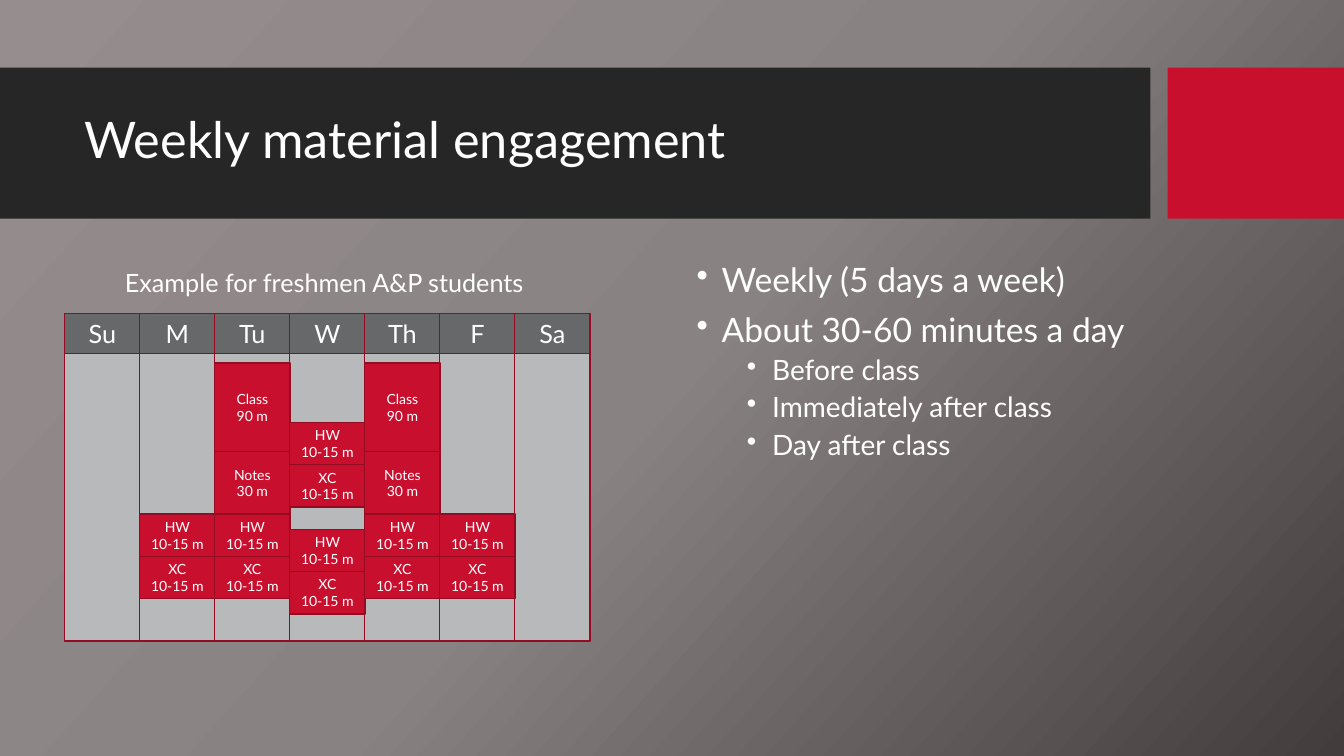
from copy import deepcopy
from dataclasses import dataclass

from lxml import etree
from pptx import Presentation
from pptx import util as u
from pptx.dml import color
from pptx.enum import shapes, text
from pptx.oxml import ns
from pptx.shapes.autoshape import Shape
from pptx.slide import Slide

FONT = "Lato"
COLORS = {
    "white": "FFFFFF",
    "banner": "262626",
    "red": "C8102E",
    "border": "940C22",
    "column": "B8B9BB",
    "header": "66686A",
}
BACKDROP = [(0, "968E8E"), (0.5, "898282"), (1, "433C3C")]
DAYS = ["Su", "M", "Tu", "W", "Th", "F", "Sa"]
CALENDAR_LEFT, DAY_STEP, DAY_WIDTH = 0.64, 0.744, 0.75


@dataclass(frozen=True)
class Task:
    name: str
    duration: str
    height: float


@dataclass(frozen=True)
class Session:
    day: str
    top: float
    tasks: tuple[Task, ...]


@dataclass(frozen=True)
class Bullet:
    label: str
    level: int = 0


LECTURE = (Task("Class", "90 m", 0.88), Task("Notes", "30 m", 0.62))
PRACTICE = (Task("HW", "10-15 m", 0.42), Task("XC", "10-15 m", 0.42))
SESSIONS = [
    Session("M", 5.1, PRACTICE),
    Session("Tu", 3.6, LECTURE + PRACTICE),
    Session("W", 4.19, PRACTICE),
    Session("W", 5.25, PRACTICE),
    Session("Th", 3.6, LECTURE + PRACTICE),
    Session("F", 5.1, PRACTICE),
]
BULLETS = [
    Bullet("Weekly (5 days a week)"),
    Bullet("About 30-60 minutes a day"),
    Bullet("Before class", 1),
    Bullet("Immediately after class", 1),
    Bullet("Day after class", 1),
]


def rgb(value: str) -> color.RGBColor:
    return color.RGBColor.from_string(value)


def write(box: Shape, content: str, *, size: float, align=text.PP_ALIGN.LEFT,
          spacing: float = 1, before: float = 0, level: int = 0,
          bullet: bool = False) -> None:
    frame = box.text_frame
    for line in content.split("\n"):
        first = not frame.text
        para = frame.paragraphs[0] if first else frame.add_paragraph()
        para.alignment = align
        para.level = level
        para.line_spacing = spacing
        para.space_before = u.Pt(0 if first else before)
        if bullet:
            properties = para._p.get_or_add_pPr()
            properties.set("marL", str(u.Inches(0.25 + 0.5 * level)))
            properties.set("indent", str(u.Inches(-0.25)))
            etree.SubElement(properties, ns.qn("a:buChar"), char="•")
        span = para.add_run()
        span.text = line
        span.font.name = FONT
        span.font.size = u.Pt(size)
        span.font.color.rgb = rgb(COLORS["white"])


def add_text_box(page: Slide, left: float, top: float, width: float, height: float,
                 *, wrap: bool = True, anchor=text.MSO_ANCHOR.TOP) -> Shape:
    box = page.shapes.add_textbox(*map(u.Inches, (left, top, width, height)))
    box.text_frame.word_wrap = wrap
    box.text_frame.vertical_anchor = anchor
    return box


def add_block(page: Slide, left: float, top: float, width: float, height: float,
              fill: str, border: str | None = None) -> Shape:
    box = page.shapes.add_shape(
        shapes.MSO_SHAPE.RECTANGLE, *map(u.Inches, (left, top, width, height)))
    box.shadow.inherit = False
    box.fill.solid()
    box.fill.fore_color.rgb = rgb(COLORS[fill])
    if border:
        box.line.color.rgb = rgb(COLORS[border])
        box.line.width = u.Pt(1)
    else:
        box.line.fill.background()
    frame = box.text_frame
    frame.margin_left = frame.margin_right = u.Inches(0.05)
    frame.vertical_anchor = text.MSO_ANCHOR.MIDDLE
    return box


def add_day_block(page: Slide, day: str, top: float, height: float, fill: str) -> Shape:
    left = CALENDAR_LEFT + DAY_STEP * DAYS.index(day)
    return add_block(page, left, top, DAY_WIDTH, height, fill, "border")


def paint_backdrop(page: Slide) -> None:
    fill = page.background.fill
    fill.gradient()
    fill.gradient_angle = 318
    stop_list = page.element.find(".//" + ns.qn("a:gsLst"))
    stop_list.append(deepcopy(stop_list[-1]))
    for stop, (position, value) in zip(fill.gradient_stops, BACKDROP):
        stop.position = position
        stop.color.rgb = rgb(value)


def add_calendar(page: Slide) -> None:
    center = text.PP_ALIGN.CENTER
    for day in DAYS:
        add_day_block(page, day, 3.5, 2.86, "column")
    for day in DAYS:
        write(add_day_block(page, day, 3.11, 0.4, "header"), day, size=18, align=center)
    for session in SESSIONS:
        top = session.top
        for task in session.tasks:
            box = add_day_block(page, session.day, top, task.height, "red")
            write(box, f"{task.name}\n{task.duration}", size=10, align=center)
            top += task.height


def main() -> None:
    deck = Presentation()
    deck.slide_width, deck.slide_height = u.Inches(13.33), u.Inches(7.5)
    page = deck.slides.add_slide(deck.slide_layouts[6])
    paint_backdrop(page)
    add_block(page, 0, 0.67, 11.41, 1.5, "banner")
    add_block(page, 11.58, 0.67, 1.75, 1.5, "red")

    title = add_text_box(page, 0.74, 0.82, 10.51, 1.18, anchor=text.MSO_ANCHOR.MIDDLE)
    write(title, "Weekly material engagement", size=36, spacing=0.9)

    body = add_text_box(page, 6.81, 2.56, 4.45, 3.94)
    for item in BULLETS:
        write(body, item.label, size=24 - 4 * item.level, spacing=0.9,
              before=10 - 5 * item.level, level=item.level, bullet=True)

    add_calendar(page)
    caption = add_text_box(page, 1.14, 2.6, 4.25, 0.4, wrap=False)
    caption.text_frame.auto_size = text.MSO_AUTO_SIZE.SHAPE_TO_FIT_TEXT
    write(caption, "Example for freshmen A&P students", size=18)
    deck.save("out.pptx")


if __name__ == "__main__":
    main()
